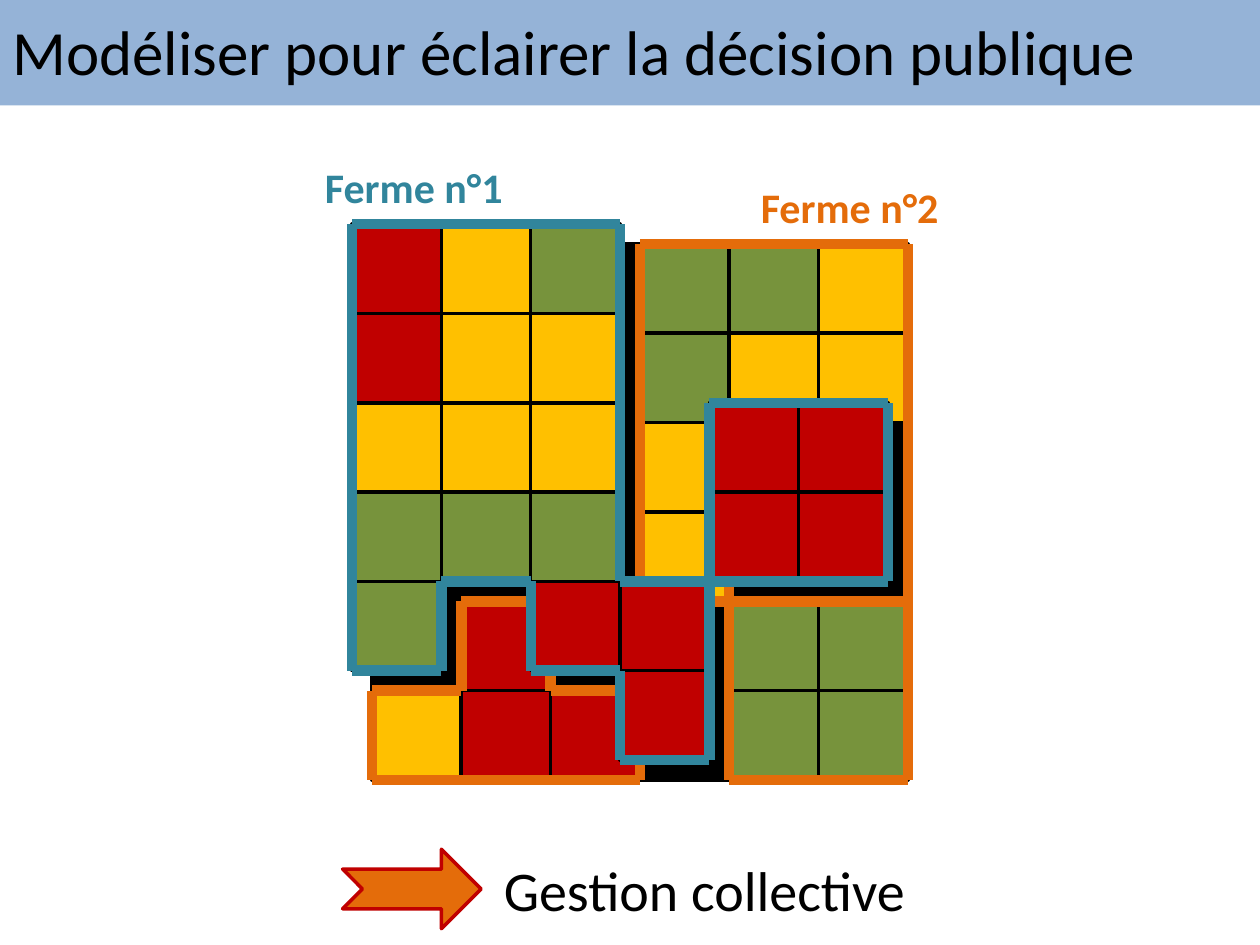
import pptx
import pptx.dml.color
import pptx.enum.shapes
import pptx.enum.text
import pptx.oxml
import pptx.oxml.ns
import pptx.util
from pptx.util import Pt

SHAPES = pptx.enum.shapes.MSO_SHAPE
COLORS = {
    "banner": "95B3D7",
    "text": "000000",
    "farm_1": "31859C",
    "farm_2": "E46C0A",
    "arrow_edge": "C00000",
    "R": "C00000",
    "Y": "FFC000",
    "G": "77933C",
    "K": "000000",
}

PLOT = 51.03  # side of one square plot
SHIFT = 2 / 9  # offset between the two farm grids, in plots
FARM_1_ORIGIN = (201.26, 128.13)
FARM_2_ORIGIN = tuple(edge + SHIFT * PLOT for edge in FARM_1_ORIGIN)

# One letter per plot; a space leaves the plot out.
FARM_1_PLOTS = ["RYG", "RYY", "YYY RR", "GGG RR", "G RR", "   R"]
FARM_2_PLOTS = ["  KGGY", "  KGYY", " KKY K", "KKKYKK", "KRKKGG", "YRRKGG"]

# Boundary segments as (column, row) pairs on the farm's own grid.
FARM_1_BOUNDARY = [
    ((0, 0), (3, 0)), ((0, 5), (0, 0)), ((1, 5), (1, 4)), ((6, 4), (6, 2)),
    ((4, 4), (4, 2)), ((6, 2), (4, 2)), ((1, 5), (0, 5)), ((3, 4), (3, 0)),
    ((2, 4), (1, 4)), ((4, 6), (4, 4)), ((6, 4), (3, 4)), ((4, 6), (3, 6)),
    ((3, 5), (2, 5)), ((3, 5), (3, 6)), ((2, 5), (2, 4)),
]
# Segments that meet farm 1 stop at its edge, hence the SHIFT.
FARM_2_BOUNDARY = [
    ((3, 0), (6, 0)), ((3, 4 - SHIFT), (3, 0)), ((6, 6), (6, 0)),
    ((4, 6), (4, 4 - SHIFT)), ((0, 6), (0, 5)), ((0, 6), (3, 6)),
    ((0, 5), (1, 5)), ((1, 4), (2 - SHIFT, 4)), ((2, 5), (3 - SHIFT, 5)),
    ((4 - SHIFT, 4), (6, 4)), ((1, 4), (1, 5)), ((3, 6 - SHIFT), (3, 6)),
    ((2, 5 - SHIFT), (2, 5)), ((4, 6), (6, 6)),
]


def rgb(name):
    return pptx.dml.color.RGBColor.from_string(COLORS[name])


def grid_point(origin, column, row):
    return origin[0] + column * PLOT, origin[1] + row * PLOT


def add_block(slide, preset, left, top, width, height, fill, edge=None):
    block = slide.shapes.add_shape(preset, Pt(left), Pt(top), Pt(width), Pt(height))
    block.shadow.inherit = False
    block.fill.solid()
    block.fill.fore_color.rgb = rgb(fill)
    if edge:
        block.line.color.rgb = rgb(edge)
        block.line.width = Pt(2)
    else:
        block.line.fill.background()


def add_plots(slide, origin, rows):
    for row, crops in enumerate(rows):
        for column, crop in enumerate(crops):
            if crop != " ":
                left, top = grid_point(origin, column, row)
                add_block(slide, SHAPES.RECTANGLE, left, top, PLOT, PLOT, crop, "K")


def add_boundary(slide, origin, segments, color):
    for start, end in segments:
        x1, y1 = grid_point(origin, *start)
        x2, y2 = grid_point(origin, *end)
        fence = slide.shapes.add_connector(
            pptx.enum.shapes.MSO_CONNECTOR.STRAIGHT, Pt(x1), Pt(y1), Pt(x2), Pt(y2))
        fence.line.color.rgb = rgb(color)
        fence.line.width = Pt(6)
        properties = fence._element.spPr
        properties.append(pptx.oxml.parse_xml(
            "<a:effectLst %s/>" % pptx.oxml.ns.nsdecls("a")))


def add_label(slide, left, top, width, height, wording, size, color, bold=False):
    label = slide.shapes.add_textbox(Pt(left), Pt(top), Pt(width), Pt(height))
    frame = label.text_frame
    frame.word_wrap = False
    frame.auto_size = pptx.enum.text.MSO_AUTO_SIZE.SHAPE_TO_FIT_TEXT
    paragraph = frame.paragraphs[0]
    paragraph.text = wording
    paragraph.font.name = "Calibri"
    paragraph.font.size = Pt(size)
    paragraph.font.bold = bold
    paragraph.font.color.rgb = rgb(color)


def main():
    deck = pptx.Presentation()
    deck.slide_width, deck.slide_height = Pt(720), Pt(540)
    slide = deck.slides.add_slide(deck.slide_layouts[6])

    add_block(slide, SHAPES.RECTANGLE, 0, 0, 720, 60.2, "banner")
    add_label(slide, 0, 3.6, 662.4, 51, "Modéliser pour éclairer la décision publique",
              36, "text")

    add_plots(slide, FARM_2_ORIGIN, FARM_2_PLOTS)
    add_plots(slide, FARM_1_ORIGIN, FARM_1_PLOTS)
    add_boundary(slide, FARM_2_ORIGIN, FARM_2_BOUNDARY, "farm_2")
    add_boundary(slide, FARM_1_ORIGIN, FARM_1_BOUNDARY, "farm_1")
    add_label(slide, 178.6, 88.6, 117.4, 36, "Ferme n°1", 24, "farm_1", bold=True)
    add_label(slide, 427.7, 100, 117.4, 36, "Ferme n°2", 24, "farm_2", bold=True)

    add_label(slide, 280.8, 485.3, 246.2, 46, "Gestion collective", 32, "text")
    add_block(slide, SHAPES.NOTCHED_RIGHT_ARROW, 195.8, 485.3, 79.2, 45.4,
              "farm_2", "arrow_edge")

    deck.save("out.pptx")


if __name__ == "__main__":
    main()
